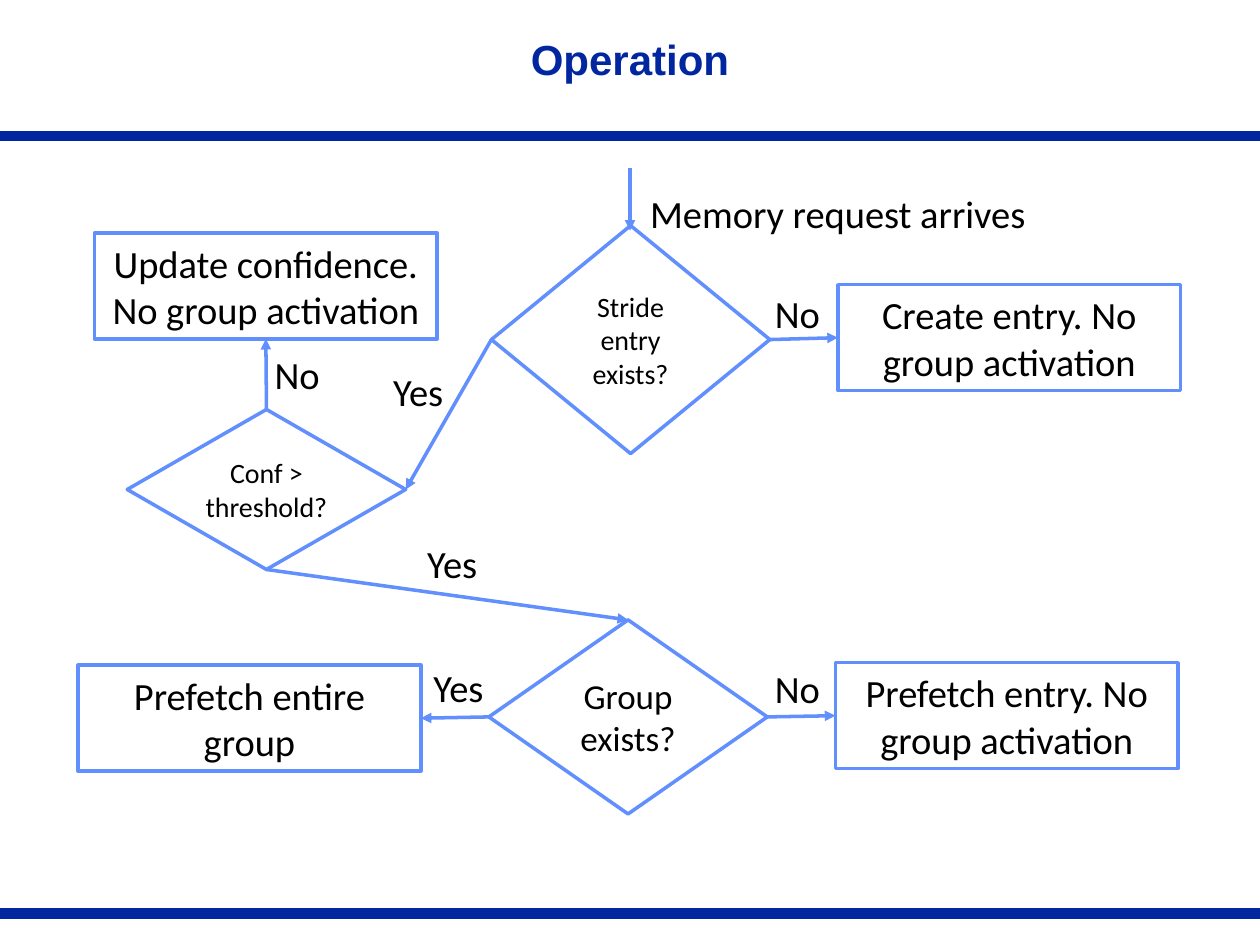
from lxml.etree import SubElement
from pptx import Presentation
from pptx.dml.color import RGBColor
from pptx.enum.shapes import MSO_CONNECTOR, MSO_SHAPE
from pptx.enum.text import MSO_ANCHOR, MSO_AUTO_SIZE, PP_ALIGN
from pptx.oxml.ns import qn
from pptx.util import Inches, Pt

COLORS = {"navy": "00279F", "blue": "618FFD", "white": "FFFFFF", "black": "000000"}
TOP, LEFT, BOTTOM, RIGHT = range(4)
BOX_SIZE = (2.72, 0.84)
DIAMOND_WIDTH = 2.21


def color(name):
    return RGBColor.from_string(COLORS[name])


def write_text(shape, text, size, align, anchor=MSO_ANCHOR.MIDDLE,
               font="Calibri", ink="black", bold=False):
    frame = shape.text_frame
    frame.text = text
    frame.word_wrap = True
    frame.vertical_anchor = anchor
    frame.margin_left = frame.margin_right = Inches(0.05)
    frame.margin_top = frame.margin_bottom = Inches(0.05)
    para = frame.paragraphs[0]
    para.alignment = align
    for span in para.runs:
        span.font.name = font
        span.font.size = Pt(size)
        span.font.bold = bold
        span.font.color.rgb = color(ink)
    return frame


def add_line(page, start, end, ink="blue", width=2):
    line = page.shapes.add_connector(MSO_CONNECTOR.STRAIGHT, *map(Inches, start + end))
    line.line.color.rgb = color(ink)
    line.line.width = Pt(width)
    SubElement(line._element.spPr, qn("a:effectLst"))
    return line


def add_arrow(page, start, end):
    arrow = add_line(page, start, end)
    SubElement(arrow.line._get_or_add_ln(), qn("a:tailEnd"), type="triangle")
    return arrow


def join(page, source, source_side, target, target_side):
    """Draw an arrow between the given sides of two steps."""
    arrow = add_arrow(page, (0, 0), (1, 1))
    arrow.begin_connect(source, source_side)
    arrow.end_connect(target, target_side)


def add_step(page, kind, text, left, top, width, height, size):
    step = page.shapes.add_shape(kind, *map(Inches, (left, top, width, height)))
    step.shadow.inherit = False
    step.fill.solid()
    step.fill.fore_color.rgb = color("white")
    step.line.color.rgb = color("blue")
    step.line.width = Pt(2)
    write_text(step, text, size, PP_ALIGN.CENTER)
    return step


def add_decision(page, text, left, top, height, size=16):
    return add_step(page, MSO_SHAPE.DIAMOND, text, left, top, DIAMOND_WIDTH, height, size)


def add_action(page, text, left, top):
    return add_step(page, MSO_SHAPE.RECTANGLE, text, left, top, *BOX_SIZE, 22)


def add_label(page, text, left, top, width):
    label = page.shapes.add_textbox(*map(Inches, (left, top, width, 0.47)))
    frame = write_text(label, text, 22, PP_ALIGN.LEFT, MSO_ANCHOR.TOP)
    frame.word_wrap = False
    frame.auto_size = MSO_AUTO_SIZE.SHAPE_TO_FIT_TEXT


def add_header(page, left, top, width, height):
    title = page.shapes.title
    title.left, title.top, title.width, title.height = map(Inches, (left, top, width, height))
    write_text(title, "Operation", 24, PP_ALIGN.CENTER,
               font="Arial", ink="navy", bold=True)
    title.text_frame.paragraphs[0].line_spacing = 0.85


def add_flowchart(page):
    stride = add_decision(page, "Stride entry exists?", 3.9, 1.79, 1.81)
    confidence = add_decision(page, "Conf > threshold?", 1.01, 3.25, 1.27)
    group = add_decision(page, "Group exists?", 3.88, 4.92, 1.54, size=20)
    create = add_action(page, "Create entry. No group activation", 6.65, 2.26)
    update = add_action(page, "Update confidence. No group activation", 0.75, 1.85)
    prefetch_group = add_action(page, "Prefetch entire group", 0.62, 5.28)
    prefetch_entry = add_action(page, "Prefetch entry. No group activation", 6.63, 5.26)

    add_arrow(page, (5, 1.33), (5, 1.83))
    for link in (
        (stride, RIGHT, create, LEFT),
        (stride, LEFT, confidence, RIGHT),
        (confidence, TOP, update, BOTTOM),
        (confidence, BOTTOM, group, TOP),
        (group, RIGHT, prefetch_entry, LEFT),
        (group, LEFT, prefetch_group, RIGHT),
    ):
        join(page, *link)

    add_label(page, "Memory request arrives", 5.11, 1.46, 3.12)
    for left, top in ((6.1, 2.25), (2.13, 2.74), (6.1, 5.23)):
        add_label(page, "No", left, top, 0.46)
    for left, top in ((3.07, 2.87), (3.34, 4.24), (3.39, 5.22)):
        add_label(page, "Yes", left, top, 0.53)


def main():
    deck = Presentation()
    deck.slide_width, deck.slide_height = Inches(10), Inches(7.5)
    page = deck.slides.add_slide(deck.slide_layouts[5])
    for height in (1.08, 7.25):
        add_line(page, (0, height), (10, height), "navy", 6)
    add_header(page, 1.75, 0.08, 6.5, 0.83)
    add_flowchart(page)
    deck.save("out.pptx")


if __name__ == "__main__":
    main()
